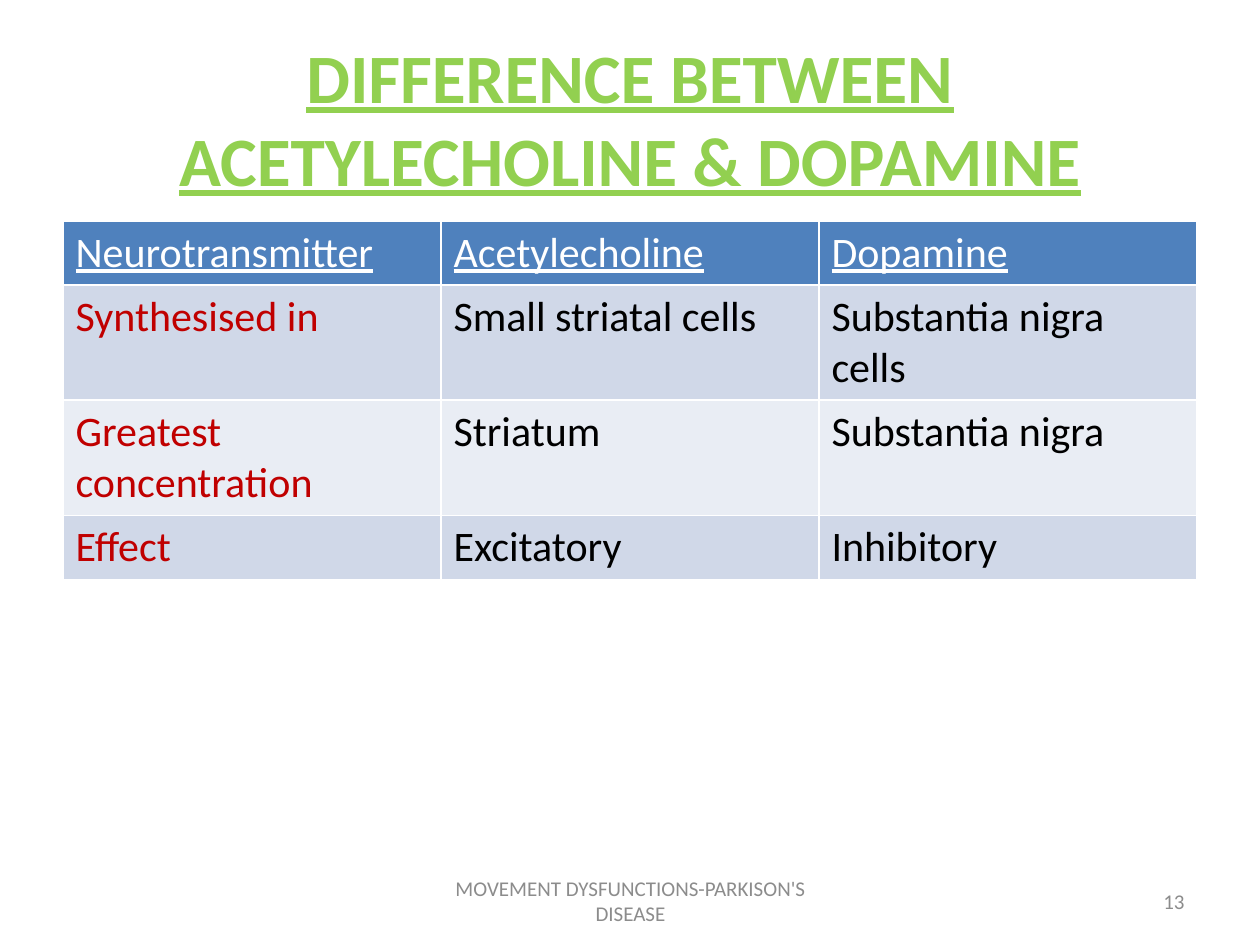
"""Build a slide comparing acetylcholine and dopamine in a table."""
from pptx import Presentation
from pptx.dml.color import RGBColor
from pptx.enum.text import MSO_ANCHOR, MSO_AUTO_SIZE, PP_ALIGN
from pptx.util import Pt

TITLE = "DIFFERENCE BETWEEN ACETYLECHOLINE & DOPAMINE"
ROWS = [
    ("Neurotransmitter", "Acetylecholine", "Dopamine"),
    ("Synthesised in", "Small striatal cells", "Substantia nigra cells"),
    ("Greatest concentration", "Striatum", "Substantia nigra"),
    ("Effect", "Excitatory", "Inhibitory"),
]
FOOTERS = [
    ("13", (903, 876, 294, 50), PP_ALIGN.RIGHT),
    ("MOVEMENT DYSFUNCTIONS-PARKISON'S DISEASE", (431, 876, 399, 50), PP_ALIGN.CENTER),
]
TITLE_AREA = (63, 38, 1134, 158)
TABLE_AREA = (63, 221, 1134, 358)
ROW_HEIGHTS = (64, 115, 115, 64)

THEME = {
    "header_fill": "4F81BD",
    "band_fills": ("E9EDF4", "D0D8E8"),
    "title": {"size": 39.6, "color": "92D050", "bold": True, "underline": True},
    "header": {"size": 24, "color": "FFFFFF", "bold": False, "underline": True},
    "label": {"size": 24, "color": "C00000"},
    "value": {"size": 24, "color": "000000"},
    "footer": {"size": 12, "color": "8C8C8C"},
}
FONT = "Calibri"
EMU_PER_PX = 914400 // 126


def px(length):
    """Turn px into EMU."""
    return length * EMU_PER_PX


def write(frame, text, style, align=PP_ALIGN.LEFT):
    """Write one formatted paragraph into a text frame."""
    para = frame.paragraphs[0]
    para.alignment = align
    span = para.add_run()
    span.text = text
    formats = {**THEME[style], "name": FONT}
    span.font.color.rgb = RGBColor.from_string(formats.pop("color"))
    formats["size"] = Pt(formats["size"])
    for name, value in formats.items():
        setattr(span.font, name, value)


def set_frame(frame):
    """Wrap the text and centre it vertically."""
    settings = {
        "word_wrap": True,
        "auto_size": MSO_AUTO_SIZE.NONE,
        "vertical_anchor": MSO_ANCHOR.MIDDLE,
    }
    for name, value in settings.items():
        setattr(frame, name, value)


def add_title(page):
    """Place and fill the title placeholder."""
    title = page.shapes.title
    for name, length in zip(("left", "top", "width", "height"), TITLE_AREA):
        setattr(title, name, px(length))
    set_frame(title.text_frame)
    write(title.text_frame, TITLE, "title", PP_ALIGN.CENTER)


def add_comparison(page):
    """Add the comparison table with banded rows."""
    table = page.shapes.add_table(len(ROWS), len(ROWS[0]), *map(px, TABLE_AREA)).table
    for row_index, texts in enumerate(ROWS):
        table.rows[row_index].height = px(ROW_HEIGHTS[row_index])
        fill = THEME["band_fills"][row_index % 2] if row_index else THEME["header_fill"]
        for column_index, text in enumerate(texts):
            cell = table.cell(row_index, column_index)
            cell.fill.solid()
            cell.fill.fore_color.rgb = RGBColor.from_string(fill)
            body_style = "value" if column_index else "label"
            write(cell.text_frame, text, body_style if row_index else "header")


def add_footers(page):
    """Add the page number and the footer text."""
    for text, area, align in FOOTERS:
        box = page.shapes.add_textbox(*map(px, area))
        set_frame(box.text_frame)
        write(box.text_frame, text, "footer", align)


def main():
    """Build and save the deck."""
    deck = Presentation()
    deck.slide_width, deck.slide_height = px(1260), px(945)
    page = deck.slides.add_slide(deck.slide_layouts[5])
    add_title(page)
    add_footers(page)
    add_comparison(page)
    deck.save("out.pptx")


if __name__ == "__main__":
    main()
